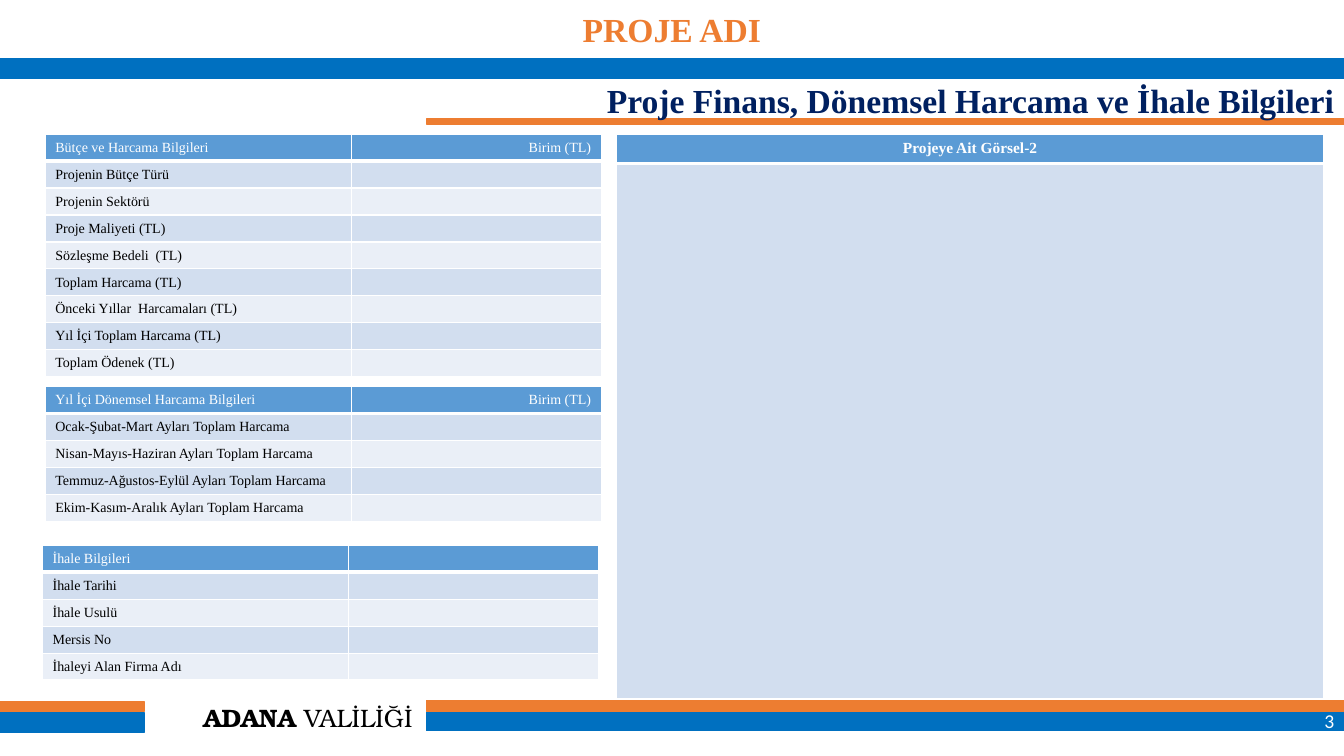
from lxml import etree
from pptx import Presentation
from pptx import util as u
from pptx.dml import color
from pptx.enum import shapes, text
from pptx.oxml import ns

SERIF = "Times New Roman"
BLUE, ORANGE, NAVY = "0070C0", "ED7D31", "002060"
WHITE, BLACK = "FFFFFF", "000000"
HEADER, BANDS = "5B9BD5", ("D2DEEF", "EAEFF7")
LEFT, CENTER, RIGHT = text.PP_ALIGN.LEFT, text.PP_ALIGN.CENTER, text.PP_ALIGN.RIGHT
TOP, MIDDLE = text.MSO_ANCHOR.TOP, text.MSO_ANCHOR.MIDDLE


def rgb(value):
    return color.RGBColor.from_string(value)


class SlideBuilder:
    row_height = 19.2
    column_widths = (218.6, 178.4)

    def __init__(self, page):
        self.page = page

    def style_span(self, span, size, ink, bold=False, face=SERIF):
        font = span.font
        font.name, font.size, font.bold = face, u.Pt(size), bold
        font.color.rgb = rgb(ink)

    def bar(self, left, top, width, height, fill, outlined=True):
        box = self.page.shapes.add_shape(
            shapes.MSO_SHAPE.RECTANGLE, *map(u.Pt, (left, top, width, height)))
        box.shadow.inherit = False
        box.fill.solid()
        box.fill.fore_color.rgb = rgb(fill)
        if outlined:
            box.line.color.rgb = rgb(fill)
            box.line.width = u.Pt(1)
        else:
            box.line.fill.background()
        return box

    def label(self, left, top, width, height, words, size, ink, align,
              bold=True, face=SERIF, anchor=TOP):
        box = self.page.shapes.add_textbox(*map(u.Pt, (left, top, width, height)))
        frame = box.text_frame
        frame.word_wrap = True
        frame.vertical_anchor = anchor
        frame.text = words
        para = frame.paragraphs[0]
        para.alignment = align
        self.style_span(para.runs[0], size, ink, bold, face)

    def borders(self, cell, top, bottom):
        properties = cell._tc.get_or_add_tcPr()
        for place, (side, width) in enumerate(
                (("lnL", 1), ("lnR", 1), ("lnT", top), ("lnB", bottom))):
            line = etree.Element(ns.qn("a:" + side), w=str(u.Pt(width)))
            fill = etree.SubElement(line, ns.qn("a:solidFill"))
            etree.SubElement(fill, ns.qn("a:srgbClr"), val=WHITE)
            properties.insert(place, line)

    def cell(self, cell, words, row, size, align, bold):
        cell.fill.solid()
        cell.fill.fore_color.rgb = rgb(BANDS[(row - 1) % 2] if row else HEADER)
        self.borders(cell, top=3 if row == 1 else 1, bottom=1 if row else 3)
        cell.vertical_anchor = MIDDLE
        para = cell.text_frame.paragraphs[0]
        para.alignment = align
        if words:
            para.text = words
            self.style_span(para.runs[0], size, BLACK if row else WHITE, bold)
        else:
            # Keeps an empty cell as low as a filled one
            etree.SubElement(para._p, ns.qn("a:endParaRPr"), sz=str(size * 100))

    def table(self, left, top, rows, widths=None, heights=None, size=10,
              aligns=(LEFT, RIGHT), bold=False):
        widths = widths or self.column_widths
        heights = heights or [self.row_height] * len(rows)
        frame = self.page.shapes.add_table(
            len(rows), len(widths),
            *map(u.Pt, (left, top, sum(widths), sum(heights))))
        grid = frame.table
        grid.horz_banding = False
        for column, width in zip(grid.columns, widths):
            column.width = u.Pt(width)
        for number, (row, height) in enumerate(zip(rows, heights)):
            grid.rows[number].height = u.Pt(height)
            for place, words in enumerate(row):
                self.cell(grid.cell(number, place), words, number, size,
                          aligns[place], bold)

    def form(self, left, top, heading, unit, entries):
        self.table(left, top, [(heading, unit)] + [(entry, "") for entry in entries])


def main():
    deck = Presentation()
    deck.slide_width, deck.slide_height = u.Pt(960), u.Pt(540)
    builder = SlideBuilder(deck.slides.add_slide(deck.slide_layouts[6]))

    # Footer with the name of the office
    builder.bar(857.5, 508.3, 102.5, 13.7, BLUE)
    office = builder.bar(128.2, 501.8, 183.6, 21.6, WHITE, outlined=False)
    office.text_frame.word_wrap = True
    office.text_frame.vertical_anchor = MIDDLE
    para = office.text_frame.paragraphs[0]
    para.alignment = CENTER
    for words, bold in (("ADANA", True), (" VALİLİĞİ", False)):
        span = para.add_run()
        span.text = words
        builder.style_span(span, 18, BLACK, bold, "TeX Gyre Bonum")
    builder.bar(304.6, 509, 553, 13, BLUE)
    builder.bar(0, 509, 103, 14.4, BLUE)
    builder.bar(0, 501.1, 103, 7.2, ORANGE)
    builder.bar(304.6, 500.4, 655.4, 7.9, ORANGE)

    # Header bars
    builder.bar(0, 42.1, 960, 13.7, BLUE)
    builder.bar(304.6, 85, 655.4, 3.6, ORANGE)

    # Page number and titles
    builder.label(744.2, 500.4, 216, 28.8, "3", 14, WHITE, RIGHT,
                  bold=False, face="Calibri", anchor=MIDDLE)
    builder.label(3.6, 2.9, 952.6, 36, "PROJE ADI", 24, ORANGE, CENTER)
    builder.label(304.6, 53.3, 655.6, 36,
                  "Proje Finans, Dönemsel Harcama ve İhale Bilgileri",
                  24, NAVY, RIGHT)

    # Budget, quarterly spending and tender tables
    builder.form(32.4, 95.8, "Bütçe ve Harcama Bilgileri", "Birim (TL)", (
        "Projenin Bütçe Türü", "Projenin Sektörü", "Proje Maliyeti (TL)",
        "Sözleşme Bedeli  (TL)", "Toplam Harcama (TL)",
        "Önceki Yıllar  Harcamaları (TL)", "Yıl İçi Toplam Harcama (TL)",
        "Toplam Ödenek (TL)"))
    quarters = ("Ocak-Şubat-Mart", "Nisan-Mayıs-Haziran",
                "Temmuz-Ağustos-Eylül", "Ekim-Kasım-Aralık")
    builder.form(32.4, 276, "Yıl İçi Dönemsel Harcama Bilgileri", "Birim (TL)",
                 [f"{months} Ayları Toplam Harcama" for months in quarters])
    builder.form(30.4, 389.5, "İhale Bilgileri", "", (
        "İhale Tarihi", "İhale Usulü", "Mersis No", "İhaleyi Alan Firma Adı"))

    # Image panel
    builder.table(440.6, 95.8, [("Projeye Ait Görsel-2",), ("",)],
                  widths=(504.7,), heights=(20.9, 382.3), size=11,
                  aligns=(CENTER,), bold=True)

    deck.save("out.pptx")


if __name__ == "__main__":
    main()
